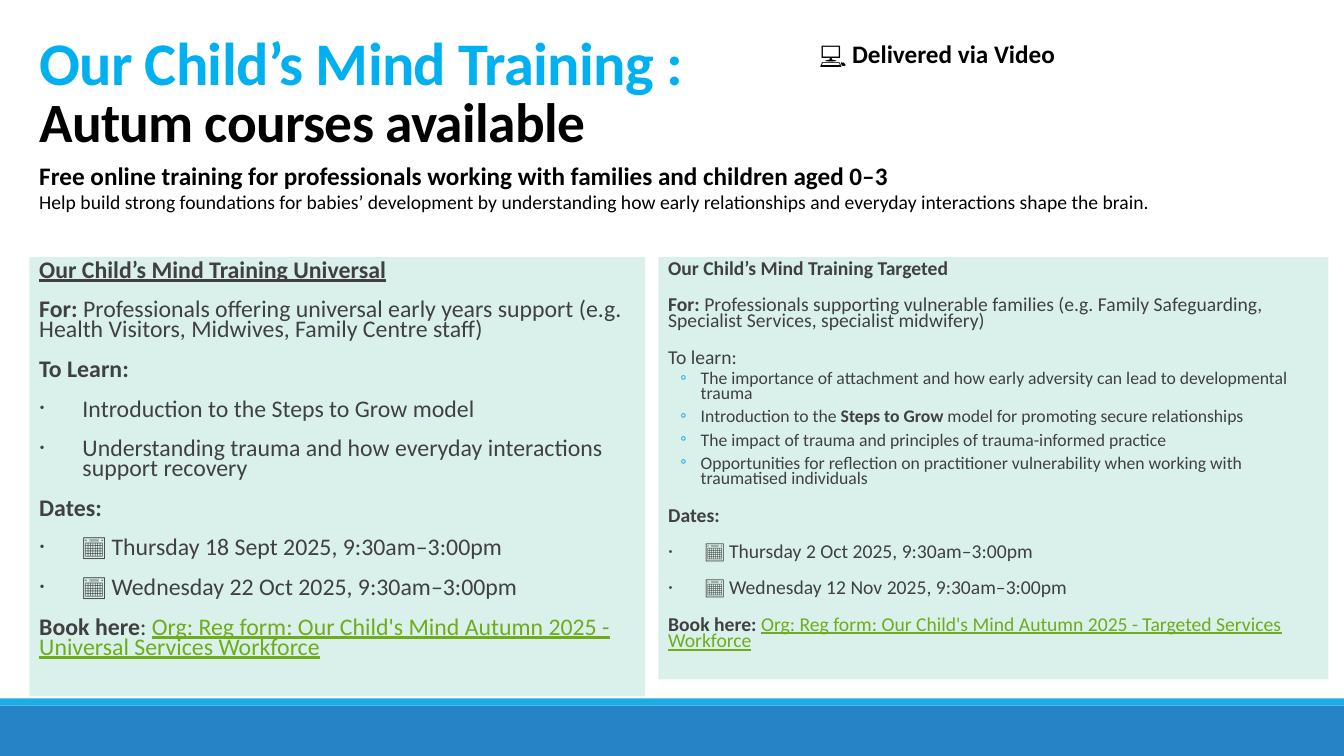
from dataclasses import dataclass

from lxml import etree
from pptx import Presentation
from pptx import util as u
from pptx.dml.color import RGBColor
from pptx.enum import shapes, text
from pptx.oxml.ns import qn


@dataclass(frozen=True)
class Theme:
    font: str = "Calibri"
    sky: str = "00B0F0"
    black: str = "000000"
    body: str = "404040"
    link: str = "6EAC1C"
    panel: str = "D9F1EA"
    accent: str = "1CADE4"
    footer: str = "2683C6"
    title: float = 43.2
    subtitle: float = 39.6
    lead: float = 18
    universal: float = 17
    targeted: float = 14
    detail: float = 12.6


THEME = Theme()
PLAIN, BOLD, HEADING, LINK = "plain", "bold", "heading", "link"


def add_band(slide, left, top, width, height, color):
    band = slide.shapes.add_shape(
        shapes.MSO_SHAPE.RECTANGLE, u.Cm(left), u.Cm(top), u.Cm(width), u.Cm(height)
    )
    band.shadow.inherit = False
    band.fill.solid()
    band.fill.fore_color.rgb = RGBColor.from_string(color)
    band.line.fill.background()
    return band


def add_runs(paragraph, parts, size, color):
    for wording, style in parts:
        run = paragraph.add_run()
        run.text = wording
        run.font.name = THEME.font
        run.font.size = u.Pt(size)
        run.font.bold = style in (BOLD, HEADING)
        run.font.underline = style in (HEADING, LINK)
        shade = THEME.link if style == LINK else color
        run.font.color.rgb = RGBColor.from_string(shade)


def set_bullet(paragraph, mark, color, margin, hanging):
    properties = paragraph._p.get_or_add_pPr()
    properties.set("marL", str(u.Cm(margin)))
    properties.set("indent", str(-u.Cm(hanging)))
    if mark:
        tint = etree.SubElement(properties, qn("a:buClr"))
        etree.SubElement(tint, qn("a:srgbClr")).set("val", color)
        etree.SubElement(properties, qn("a:buFont")).set("typeface", THEME.font)
        etree.SubElement(properties, qn("a:buChar")).set("char", mark)


def add_label(slide, left, top, width, height, lines, anchor=text.MSO_ANCHOR.TOP):
    label = slide.shapes.add_textbox(u.Cm(left), u.Cm(top), u.Cm(width), u.Cm(height))
    frame = label.text_frame
    frame.word_wrap = True
    frame.vertical_anchor = anchor
    for index, (wording, style, size, color) in enumerate(lines):
        paragraph = frame.paragraphs[0] if index == 0 else frame.add_paragraph()
        add_runs(paragraph, [(wording, style)], size, color)
    return frame


def add_title(slide):
    frame = add_label(slide, 0.74, 0.86, 23.16, 3.15, [
        ("Our Child’s Mind Training :", BOLD, THEME.title, THEME.sky),
        ("Autum courses available", BOLD, THEME.subtitle, THEME.black),
    ], text.MSO_ANCHOR.BOTTOM)
    for paragraph in frame.paragraphs:
        paragraph.line_spacing = 0.85
        for run in paragraph.runs:
            run.font._element.set("spc", "-50")


def add_course(slide, left, width, height, size, item_indent, entries):
    panel = add_band(slide, left, 6.48, width, height, THEME.panel)
    frame = panel.text_frame
    frame.word_wrap = True
    frame.vertical_anchor = text.MSO_ANCHOR.TOP
    frame.margin_left = frame.margin_right = 0
    frame.margin_top = frame.margin_bottom = u.Cm(0.13)
    layouts = {
        "text": (None, THEME.body, 0.25, 0, 12, 2, size),
        "item": ("·", THEME.body, 0.25 + item_indent, item_indent, 12, 2, size),
        "detail": ("◦", THEME.accent, 1.07, 0.51, 2, 4, THEME.detail),
    }
    for index, (kind, *parts) in enumerate(entries):
        mark, tint, margin, hanging, before, after, type_size = layouts[kind]
        paragraph = frame.paragraphs[0] if index == 0 else frame.add_paragraph()
        set_bullet(paragraph, mark, tint, margin, hanging)
        paragraph.alignment = text.PP_ALIGN.LEFT
        paragraph.line_spacing = 0.7
        paragraph.space_before = u.Pt(before if index else 0)
        paragraph.space_after = u.Pt(after)
        add_runs(paragraph, parts, type_size, THEME.body)


def main():
    deck = Presentation()
    deck.slide_width, deck.slide_height = u.Cm(33.87), u.Cm(19.05)
    slide = deck.slides.add_slide(deck.slide_layouts[6])

    add_band(slide, 0, 17.78, 33.87, 1.27, THEME.footer)
    add_band(slide, 0, 17.6, 33.87, 0.18, THEME.accent)
    add_title(slide)

    add_course(slide, 0.74, 15.52, 11.07, THEME.universal, 1.09, [
        ("text", ("Our Child’s Mind Training Universal", HEADING)),
        ("text", ("For:", BOLD),
         (" Professionals offering universal early years support (e.g. "
          "Health Visitors, Midwives, Family Centre staff)", PLAIN)),
        ("text", ("To Learn:", BOLD)),
        ("item", ("Introduction to the Steps to Grow model", PLAIN)),
        ("item", ("Understanding trauma and how everyday interactions "
                  "support recovery", PLAIN)),
        ("text", ("Dates:", BOLD)),
        ("item", ("📅 Thursday 18 Sept 2025, 9:30am–3:00pm", PLAIN)),
        ("item", ("📅 Wednesday 22 Oct 2025, 9:30am–3:00pm", PLAIN)),
        ("text", ("Book here", BOLD), (": ", PLAIN),
         ("Org: Reg form: Our Child's Mind Autumn 2025 - "
          "Universal Services Workforce", LINK)),
    ])
    add_course(slide, 16.59, 16.89, 10.64, THEME.targeted, 0.93, [
        ("text", ("Our Child’s Mind Training Targeted", BOLD)),
        ("text", ("For:", BOLD),
         (" Professionals supporting vulnerable families (e.g. Family Safeguarding, "
          "Specialist Services, specialist midwifery)", PLAIN)),
        ("text", ("To learn:", PLAIN)),
        ("detail", ("The importance of attachment and how early adversity "
                    "can lead to developmental trauma", PLAIN)),
        ("detail", ("Introduction to the ", PLAIN), ("Steps to Grow", BOLD),
         (" model for promoting secure relationships", PLAIN)),
        ("detail", ("The impact of trauma and principles of "
                    "trauma-informed practice", PLAIN)),
        ("detail", ("Opportunities for reflection on practitioner vulnerability "
                    "when working with traumatised individuals", PLAIN)),
        ("text", ("Dates:", BOLD)),
        ("item", ("📅 Thursday 2 Oct 2025, 9:30am–3:00pm", PLAIN)),
        ("item", ("📅 Wednesday 12 Nov 2025, 9:30am–3:00pm", PLAIN)),
        ("text", ("Book here: ", BOLD),
         ("Org: Reg form: Our Child's Mind Autumn 2025 - "
          "Targeted Services Workforce", LINK)),
    ])

    add_label(slide, 0.74, 3.91, 32.39, 2.39, [
        ("Free online training for professionals working with families "
         "and children aged 0–3", BOLD, THEME.lead, THEME.black),
        ("Help build strong foundations for babies’ development by understanding "
         "how early relationships and everyday interactions shape the brain.",
         PLAIN, THEME.targeted, THEME.black),
    ])
    add_label(slide, 20.4, 0.84, 7.47, 1.02, [
        ("💻 Delivered via Video", BOLD, THEME.lead, THEME.black),
    ])
    deck.save("out.pptx")


if __name__ == "__main__":
    main()
